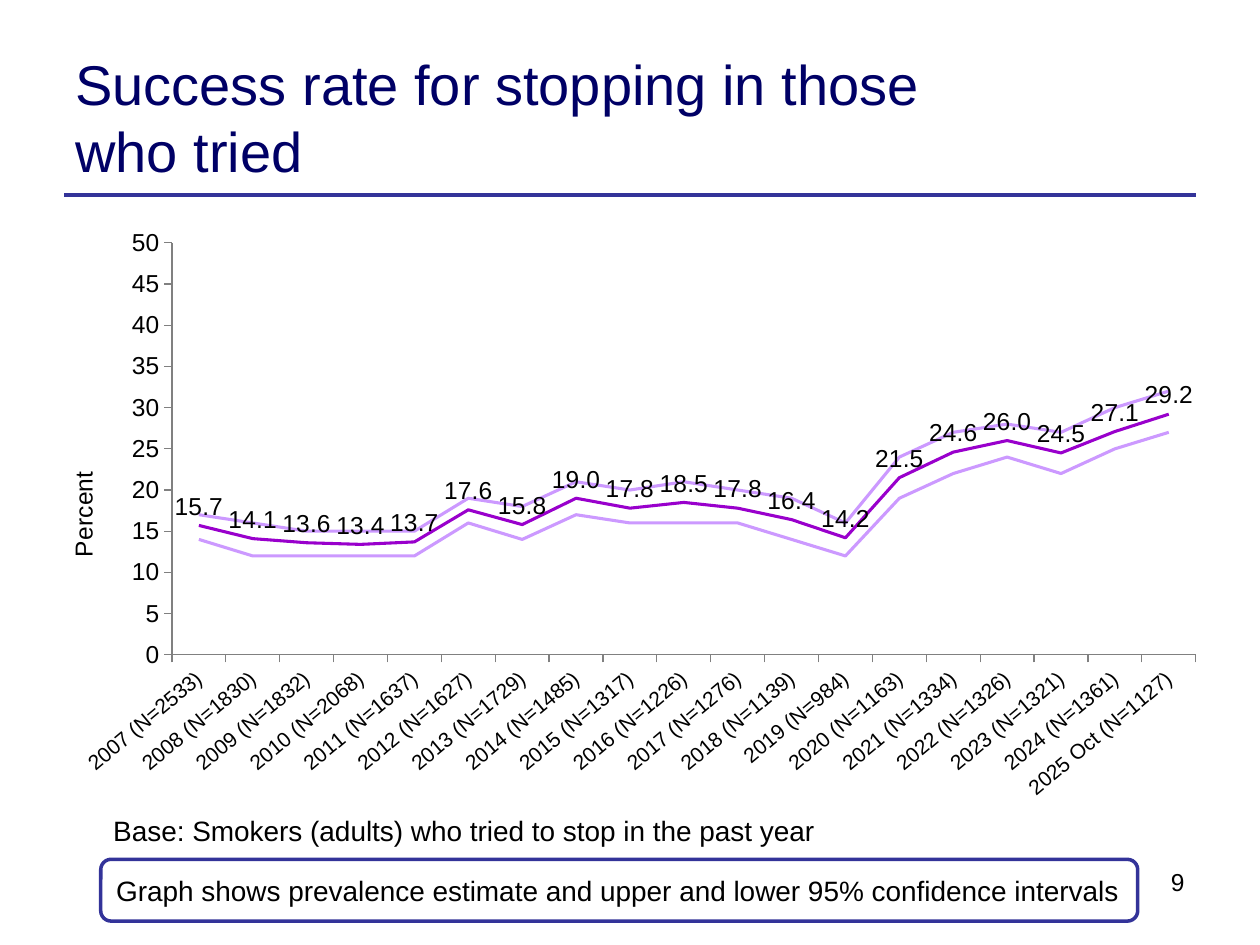
"""Build the slide on success rates for stopping smoking."""
from dataclasses import dataclass

from lxml.etree import SubElement
from pptx import Presentation
from pptx.chart.chart import Chart
from pptx.chart.data import CategoryChartData
from pptx.dml.color import RGBColor
from pptx.enum.chart import XL_CHART_TYPE, XL_LABEL_POSITION, XL_TICK_MARK
from pptx.enum.shapes import MSO_CONNECTOR, MSO_SHAPE
from pptx.enum.text import MSO_ANCHOR, MSO_AUTO_SIZE, PP_ALIGN
from pptx.oxml import parse_xml
from pptx.oxml.ns import nsdecls, qn
from pptx.slide import Slide
from pptx.text.text import Font, TextFrame
from pptx.util import Inches, Pt

FONT = "Arial"
COLORS = {
    "title": "000066", "text": "000000", "rule": "333399", "axis": "808080",
    "estimate": "9900CC", "interval": "CC99FF", "background": "FFFFFF",
}
SAMPLES = {
    "2007": 2533, "2008": 1830, "2009": 1832, "2010": 2068, "2011": 1637,
    "2012": 1627, "2013": 1729, "2014": 1485, "2015": 1317, "2016": 1226,
    "2017": 1276, "2018": 1139, "2019": 984, "2020": 1163, "2021": 1334,
    "2022": 1326, "2023": 1321, "2024": 1361, "2025 Oct": 1127,
}


@dataclass
class Series:
    name: str
    color: str
    values: list[float]


@dataclass
class Label:
    text: str
    box: tuple[float, float, float, float]
    size: float
    color: str = "text"
    align: PP_ALIGN = PP_ALIGN.LEFT
    anchor: MSO_ANCHOR = MSO_ANCHOR.TOP
    wrap: bool = True
    framed: bool = False


SERIES = [
    Series("Series 1", "estimate", [
        15.7, 14.1, 13.6, 13.4, 13.7, 17.6, 15.8, 19, 17.8, 18.5,
        17.8, 16.4, 14.2, 21.5, 24.6, 26, 24.5, 27.1, 29.2]),
    Series("Series 2", "interval", [
        17, 16, 15, 15, 15, 19, 18, 21, 20, 21, 20, 19, 16, 24, 27, 28, 27, 30, 32]),
    Series("Series 3", "interval", [
        14, 12, 12, 12, 12, 16, 14, 17, 16, 16, 16, 14, 12, 19, 22, 24, 22, 25, 27]),
]
LABELS = [
    Label("Success rate for stopping in those who tried", (0.5, 0.3, 7.81, 1.25), 32,
          color="title", anchor=MSO_ANCHOR.MIDDLE),
    Label("9", (6.73, 6.83, 2.77, 0.52), 14, align=PP_ALIGN.RIGHT),
    Label("Graph shows prevalence estimate and upper and lower 95% confidence intervals",
          (0.8, 6.82, 8.23, 0.49), 16, anchor=MSO_ANCHOR.MIDDLE, framed=True),
    Label("Base: Smokers (adults) who tried to stop in the past year",
          (0.8, 6.41, 5.85, 0.37), 16, wrap=False),
]


def rgb(name: str) -> RGBColor:
    """Return a named colour."""
    return RGBColor.from_string(COLORS[name])


def style_font(font: Font, size: float, color: str = "text") -> None:
    """Set typeface, size, weight and colour."""
    font.name = FONT
    font.size = Pt(size)
    font.bold = False
    font.color.rgb = rgb(color)


def fill_text(frame: TextFrame, label: Label) -> None:
    """Write the label into a text frame."""
    frame.word_wrap = label.wrap
    frame.vertical_anchor = label.anchor
    if not label.wrap:
        frame.auto_size = MSO_AUTO_SIZE.SHAPE_TO_FIT_TEXT
    paragraph = frame.paragraphs[0]
    paragraph.text = label.text
    paragraph.alignment = label.align
    style_font(paragraph.font, label.size, label.color)


def add_label(slide: Slide, label: Label) -> None:
    """Add a plain or framed text label."""
    box = [Inches(length) for length in label.box]
    if label.framed:
        shape = slide.shapes.add_shape(MSO_SHAPE.ROUNDED_RECTANGLE, *box)
        shape.shadow.inherit = False
        shape.fill.solid()
        shape.fill.fore_color.rgb = rgb("background")
        shape.line.color.rgb = rgb("rule")
        shape.line.width = Pt(2)
    else:
        shape = slide.shapes.add_textbox(*box)
    fill_text(shape.text_frame, label)


def add_rule(slide: Slide) -> None:
    """Add the line below the title."""
    rule = slide.shapes.add_connector(
        MSO_CONNECTOR.STRAIGHT, Inches(0.51), Inches(1.55), Inches(9.49), Inches(1.55))
    rule.line.color.rgb = rgb("rule")
    rule.line.width = Pt(2.25)
    SubElement(rule.element.spPr, qn("a:effectLst"))


def set_plot_layout(chart: Chart, x: float, y: float, w: float, h: float) -> None:
    """Fix the inner plot area as fractions of the chart."""
    plot_area = chart.element.find(".//" + qn("c:plotArea"))
    for layout in plot_area.findall(qn("c:layout")):
        plot_area.remove(layout)
    plot_area.insert(0, parse_xml(
        f'<c:layout {nsdecls("c")}><c:manualLayout><c:layoutTarget val="inner"/>'
        '<c:xMode val="edge"/><c:yMode val="edge"/>'
        f'<c:x val="{x}"/><c:y val="{y}"/><c:w val="{w}"/><c:h val="{h}"/>'
        '</c:manualLayout></c:layout>'))


def style_axes(chart: Chart) -> None:
    """Format both axes and the value axis title."""
    for axis, size in ((chart.category_axis, 12), (chart.value_axis, 14)):
        axis.has_major_gridlines = False
        axis.major_tick_mark = XL_TICK_MARK.OUTSIDE
        axis.minor_tick_mark = XL_TICK_MARK.NONE
        axis.format.line.color.rgb = rgb("axis")
        axis.format.line.width = Pt(0.75)
        style_font(axis.tick_labels.font, size)
    label_body = chart.category_axis._element.find(qn("c:txPr")).find(qn("a:bodyPr"))
    label_body.set("rot", "-2400000")
    value_axis = chart.value_axis
    value_axis.minimum_scale = 0
    value_axis.maximum_scale = 50
    value_axis.major_unit = 5
    paragraph = value_axis.axis_title.text_frame.paragraphs[0]
    paragraph.text = "Percent"
    style_font(paragraph.font, 14)


def add_rate_chart(slide: Slide) -> None:
    """Add the line chart of estimates and confidence limits."""
    data = CategoryChartData()
    data.categories = [f"{year} (N={count})" for year, count in SAMPLES.items()]
    for series in SERIES:
        data.add_series(series.name, series.values)
    chart = slide.shapes.add_chart(
        XL_CHART_TYPE.LINE, Inches(0.5), Inches(1.75), Inches(9.1), Inches(4.66), data).chart
    chart.has_legend = False
    chart.has_title = False
    style_font(chart.font, 18)
    set_plot_layout(chart, 0.095, 0.038, 0.893, 0.702)
    style_axes(chart)
    plot = chart.plots[0]
    plot.vary_by_categories = False
    for line, series in zip(plot.series, SERIES):
        line.smooth = False
        line.format.line.color.rgb = rgb(series.color)
        line.format.line.width = Pt(1.75)
    labels = plot.series[0].data_labels
    labels.show_value = True
    labels.position = XL_LABEL_POSITION.ABOVE
    labels.number_format = "#,##0.0"
    labels.number_format_is_linked = False
    style_font(labels.font, 14)


def main() -> None:
    """Create and save the presentation."""
    presentation = Presentation()
    presentation.slide_width = Inches(10)
    presentation.slide_height = Inches(7.5)
    slide = presentation.slides.add_slide(presentation.slide_layouts[6])
    add_rule(slide)
    add_rate_chart(slide)
    for label in LABELS:
        add_label(slide, label)
    presentation.save("out.pptx")


if __name__ == "__main__":
    main()
